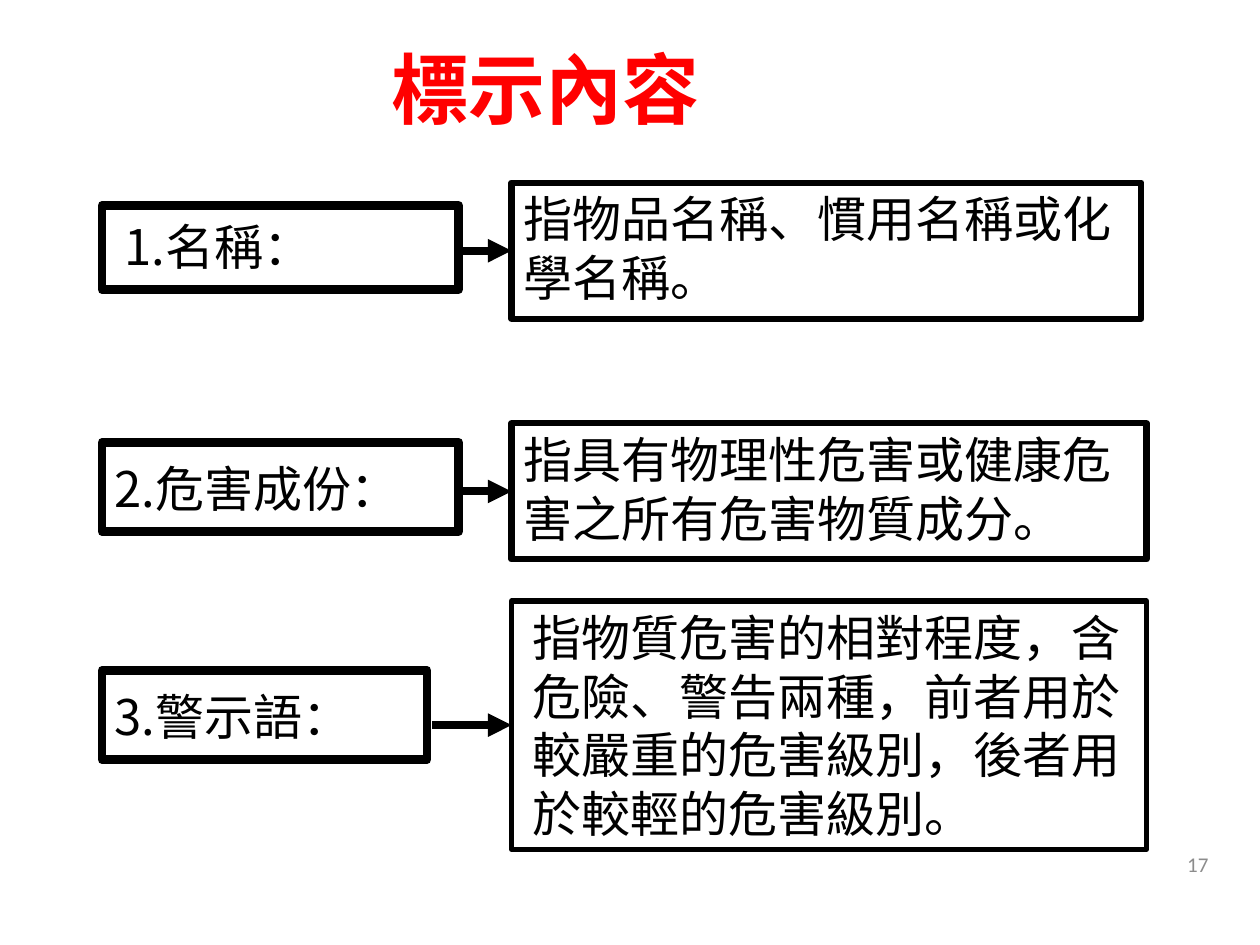
from dataclasses import dataclass

from lxml.etree import SubElement
from pptx import Presentation
from pptx.dml.color import RGBColor
from pptx.enum.shapes import MSO_CONNECTOR, MSO_SHAPE
from pptx.enum.text import MSO_ANCHOR, PP_ALIGN
from pptx.oxml.ns import qn
from pptx.util import Inches, Pt

COLORS = {"ink": "000000", "title": "FF0000", "number": "8C8C8C"}
CJK = "Noto Sans CJK SC"
BODY = {"name": CJK, "size": Pt(28), "bold": False}
TITLE = {"name": CJK, "size": Pt(44), "bold": True}
NUMBER = {"name": "Calibri", "size": Pt(12), "bold": False}

Box = tuple[float, float, float, float]


@dataclass
class Row:
    label: str
    label_box: Box
    label_text: Box
    meaning: str
    meaning_box: Box
    meaning_line: float
    arrow_start: float
    meaning_text: Box | None = None


ROWS = [
    Row("1.名稱：", (0.81, 1.63, 2.83, 0.67), (0.89, 1.67, 2.06, 0.57),
        "指物品名稱、慣用名稱或化學名稱。", (4.06, 1.45, 5, 1.08), 3.5, 3.61),
    Row("2.危害成份：", (0.81, 3.51, 2.83, 0.71), (0.81, 3.59, 2.62, 0.57),
        "指具有物理性危害或健康危害之所有危害物質成分。",
        (4.06, 3.36, 5.04, 1.08), 3.5, 3.62),
    Row("3.警示語：", (0.81, 5.32, 2.58, 0.71), (0.81, 5.4, 2.15, 0.57),
        "指物質危害的相對程度，含危險、警告兩種，前者用於較嚴重的危害級別，後者用於較輕的危害級別。",
        (4.06, 4.77, 5.04, 1.97), 3, 3.43, (4.13, 4.77, 4.92, 1.99)),
]


def write(sp, text: str, style: dict, color: str = "ink",
          align=PP_ALIGN.LEFT, anchor=MSO_ANCHOR.TOP) -> None:
    tf = sp.text_frame
    tf.word_wrap = True
    tf.vertical_anchor = anchor
    p = tf.paragraphs[0]
    p.alignment = align
    r = p.add_run()
    r.text = text
    for key, value in style.items():
        setattr(r.font, key, value)
    r.font.color.rgb = RGBColor.from_string(COLORS[color])
    SubElement(r.font._element, qn("a:ea"), typeface=style["name"])


def add_text(s, box: Box, text: str, style: dict, **layout) -> None:
    write(s.shapes.add_textbox(*map(Inches, box)), text, style, **layout)


def add_frame(s, box: Box, width: float):
    sp = s.shapes.add_shape(MSO_SHAPE.RECTANGLE, *map(Inches, box))
    sp.shadow.inherit = False
    sp.fill.background()
    sp.line.color.rgb = RGBColor.from_string(COLORS["ink"])
    sp.line.width = Pt(width)
    return sp


def add_arrow(s, start: float, target) -> None:
    y = target.top + target.height // 2
    cx = s.shapes.add_connector(MSO_CONNECTOR.STRAIGHT, Inches(start), y, target.left, y)
    cx.end_connect(target, 1)
    cx.line.color.rgb = RGBColor.from_string(COLORS["ink"])
    cx.line.width = Pt(4.5)
    SubElement(cx.line._get_or_add_ln(), qn("a:tailEnd"), type="triangle")
    SubElement(cx._element.spPr, qn("a:effectLst"))


def add_row(s, row: Row) -> None:
    add_frame(s, row.label_box, 5)
    add_text(s, row.label_text, row.label, BODY)
    meaning = add_frame(s, row.meaning_box, row.meaning_line)
    if row.meaning_text:
        add_text(s, row.meaning_text, row.meaning, BODY)
    else:
        write(meaning, row.meaning, BODY)
    add_arrow(s, row.arrow_start, meaning)


def main() -> None:
    prs = Presentation()
    prs.slide_width, prs.slide_height = Inches(10), Inches(7.5)
    s = prs.slides.add_slide(prs.slide_layouts[5])

    title = s.shapes.title
    title.left, title.top, title.width, title.height = map(Inches, (2.56, 0.16, 4, 1.07))
    title.text_frame.margin_left = Inches(0.55)
    write(title, "標示內容", TITLE, "title", anchor=MSO_ANCHOR.MIDDLE)

    for row in ROWS:
        add_row(s, row)

    add_text(s, (7.36, 6.66, 2.33, 0.4), "17", NUMBER, color="number",
             align=PP_ALIGN.RIGHT, anchor=MSO_ANCHOR.MIDDLE)
    prs.save("out.pptx")


if __name__ == "__main__":
    main()
